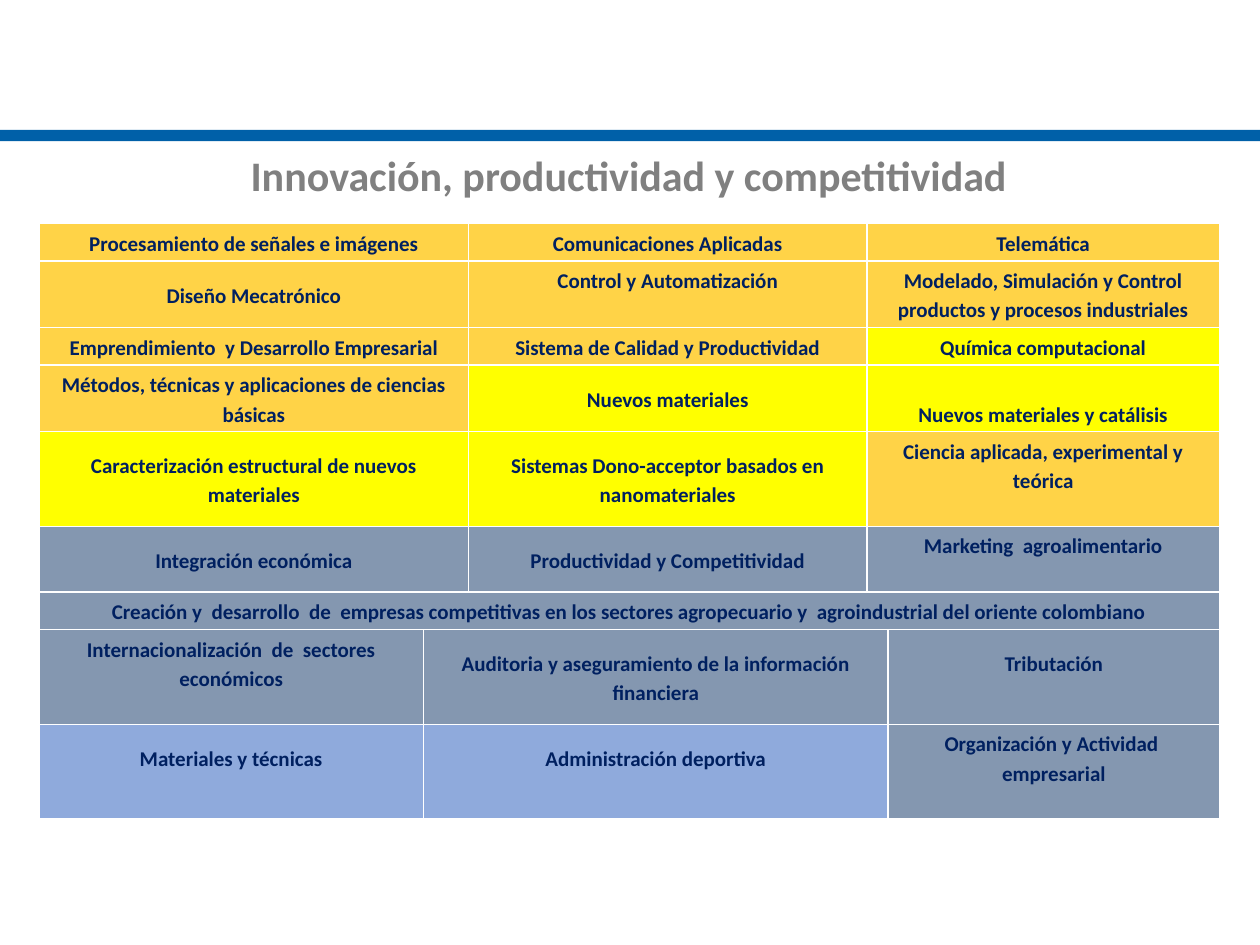
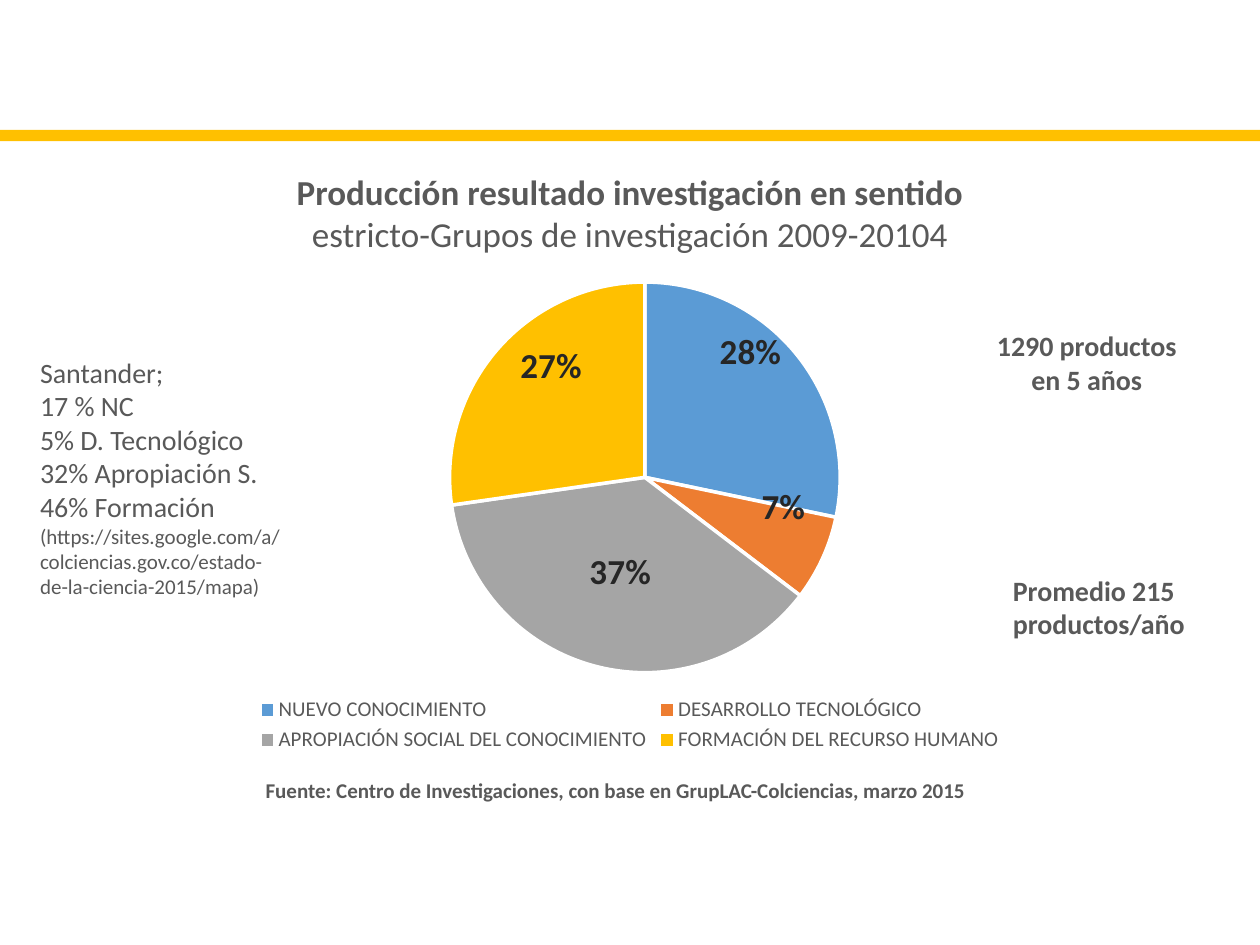
from dataclasses import dataclass
from typing import NamedTuple

from lxml.etree import SubElement
from pptx import Presentation
from pptx.chart.data import CategoryChartData
from pptx.dml.color import RGBColor
from pptx.enum.chart import XL_CHART_TYPE as ChartType
from pptx.enum.chart import XL_LABEL_POSITION as LabelPosition
from pptx.enum.chart import XL_LEGEND_POSITION as LegendPosition
from pptx.enum.shapes import MSO_SHAPE as ShapeKind
from pptx.enum.text import MSO_ANCHOR as Anchor
from pptx.enum.text import MSO_AUTO_SIZE as AutoSize
from pptx.enum.text import PP_ALIGN as Align
from pptx.oxml import parse_xml
from pptx.oxml.ns import nsdecls, qn
from pptx.util import Inches, Pt


@dataclass(frozen=True)
class Theme:
    """Colours, font and type sizes of the deck."""
    font: str = "Calibri"
    blue_band: str = "0060A8"
    gold: str = "FFC000"
    heading: str = "808080"
    text: str = "595959"
    label: str = "262626"
    navy: str = "002060"
    white: str = "FFFFFF"
    amber: str = "FFD347"
    yellow: str = "FFFF00"
    slate: str = "8497B0"
    sky: str = "8FAADC"
    slices: tuple = ("5B9BD5", "ED7D31", "A5A5A5", "FFC000")
    title: int = 24
    subtitle: int = 20
    body: int = 16
    small: int = 12


THEME = Theme()
GRID_COLUMNS, GRID_ROWS = 100, 75


class Box(NamedTuple):
    """A rectangle in inches."""
    left: float
    top: float
    width: float
    height: float

    def area(self, column, row, columns, rows):
        """Return the box that covers the given grid columns and rows."""
        column_width, row_height = self.width / GRID_COLUMNS, self.height / GRID_ROWS
        return Box(self.left + column * column_width, self.top + row * row_height,
                   columns * column_width, rows * row_height)

    def lengths(self):
        """Return left, top, width and height as slide lengths."""
        return [Inches(value) for value in self]


class Topic(NamedTuple):
    """A research line in the table, with its fill and place in the cell."""
    text: str
    fill: str
    anchor: Anchor = Anchor.MIDDLE
    lift: float = 0


PAGE = Box(0, 0, 10, 7.5)
COLUMN_WEIGHTS = [3.05, 0.36, 3.16, 0.17, 2.63]
ROW_WEIGHTS = [0.3, 0.52, 0.3, 0.52, 0.75, 0.52, 0.3, 0.75, 0.75]
UPPER_SPANS, FULL_SPAN, LOWER_SPANS = [2, 1, 2], [5], [1, 3, 1]
ROW_SPANS = [UPPER_SPANS] * 6 + [FULL_SPAN] + [LOWER_SPANS] * 2
LINE = 0.23
TOPICS = [
    [Topic("Procesamiento de señales e imágenes", THEME.amber),
     Topic("Comunicaciones Aplicadas", THEME.amber),
     Topic("Telemática", THEME.amber)],
    [Topic("Diseño Mecatrónico", THEME.amber),
     Topic("Control y Automatización", THEME.amber, Anchor.TOP),
     Topic("Modelado, Simulación y Control productos y procesos industriales", THEME.amber)],
    [Topic("Emprendimiento  y Desarrollo Empresarial", THEME.amber),
     Topic("Sistema de Calidad y Productividad", THEME.amber),
     Topic("Química computacional", THEME.yellow)],
    [Topic("Métodos, técnicas y aplicaciones de ciencias básicas", THEME.amber),
     Topic("Nuevos materiales", THEME.yellow),
     Topic("Nuevos materiales y catálisis", THEME.yellow, Anchor.BOTTOM)],
    [Topic("Caracterización estructural de nuevos materiales", THEME.yellow),
     Topic("Sistemas Dono-acceptor basados en nanomateriales", THEME.yellow),
     Topic("Ciencia aplicada, experimental y teórica", THEME.amber, Anchor.TOP)],
    [Topic("Integración económica", THEME.slate),
     Topic("Productividad y Competitividad", THEME.slate),
     Topic("Marketing  agroalimentario", THEME.slate, Anchor.TOP)],
    [Topic("Creación y  desarrollo  de  empresas competitivas en los sectores "
           "agropecuario y  agroindustrial del oriente colombiano", THEME.slate)],
    [Topic("Internacionalización  de  sectores económicos", THEME.slate, Anchor.TOP),
     Topic("Auditoria y aseguramiento de la información financiera", THEME.slate),
     Topic("Tributación", THEME.slate, lift=LINE)],
    [Topic("Materiales y técnicas", THEME.sky, lift=LINE),
     Topic("Administración deportiva", THEME.sky, lift=LINE),
     Topic("Organización y Actividad  empresarial", THEME.slate, Anchor.TOP)],
]
PRODUCTS = {"NUEVO CONOCIMIENTO": 28, "DESARROLLO TECNOLÓGICO": 7,
            "APROPIACIÓN SOCIAL DEL CONOCIMIENTO": 37, "FORMACIÓN DEL RECURSO HUMANO": 27}
LABEL_SHIFTS = [(0.03, -0.12), (0.05, -0.02), (0, 0), (-0.02, -0.09)]


def style_font(font, size, colour, bold=False):
    """Set the theme font with a size, a colour and a weight."""
    font.name, font.size, font.bold = THEME.font, Pt(size), bold
    font.color.rgb = RGBColor.from_string(colour)


def paint(fill, colour):
    """Give a fill one solid colour."""
    fill.solid()
    fill.fore_color.rgb = RGBColor.from_string(colour)


def start_slide(presentation, box, band_colour):
    """Add a title-only slide with its coloured band."""
    slide = presentation.slides.add_slide(presentation.slide_layouts[5])
    band = slide.shapes.add_shape(ShapeKind.RECTANGLE, *box.area(0, 10.3, 100, 0.9).lengths())
    band.shadow.inherit = False
    paint(band.fill, band_colour)
    band.line.fill.background()
    return slide


def set_title(slide, box, runs, size, colour):
    """Move the title placeholder and fill it with (text, bold) runs."""
    title = slide.shapes.title
    title.left, title.top, title.width, title.height = box.lengths()
    frame = title.text_frame
    frame.auto_size, frame.word_wrap = AutoSize.NONE, True
    frame.vertical_anchor = Anchor.TOP
    paragraph = frame.paragraphs[0]
    paragraph.alignment = Align.CENTER
    for text, bold in runs:
        run = paragraph.add_run()
        run.text = text
        style_font(run.font, size, colour, bold)


def add_note(slide, box, lines, size=THEME.body, bold=True, align=Align.LEFT, wrap=True):
    """Add a text box with one paragraph per line and return its last paragraph."""
    frame = slide.shapes.add_textbox(*box.lengths()).text_frame
    frame.word_wrap = wrap
    for index, line in enumerate(lines):
        paragraph = frame.add_paragraph() if index else frame.paragraphs[0]
        paragraph.text = line
        paragraph.alignment = align
        style_font(paragraph.font, size, THEME.text, bold)
    return paragraph


def style_cell(cell, topic):
    """Fill a cell and give it thin white borders."""
    paint(cell.fill, topic.fill)
    properties = cell._tc.get_or_add_tcPr()
    for index, side in enumerate(("lnL", "lnR", "lnT", "lnB")):
        properties.insert(index, parse_xml(
            f'<a:{side} {nsdecls("a")} w="12700"><a:solidFill>'
            f'<a:srgbClr val="{THEME.white}"/></a:solidFill></a:{side}>'))


def write_topic(cell, topic):
    """Write a centred topic into a cell."""
    cell.margin_left = cell.margin_right = Inches(0.06)
    cell.margin_top, cell.margin_bottom = Inches(0.03), Inches(0.03 + topic.lift)
    cell.vertical_anchor = topic.anchor
    paragraph = cell.text_frame.paragraphs[0]
    paragraph.text = topic.text
    paragraph.alignment, paragraph.line_spacing = Align.CENTER, 1.15
    style_font(paragraph.font, THEME.small, THEME.navy, True)


def add_topic_table(slide, box):
    """Add the table of research lines, merging cells by the row spans."""
    table = slide.shapes.add_table(len(ROW_WEIGHTS), len(COLUMN_WEIGHTS), *box.lengths()).table
    table.first_row = table.horz_banding = False
    for column, weight in zip(table.columns, COLUMN_WEIGHTS):
        column.width = Inches(box.width * weight / sum(COLUMN_WEIGHTS))
    for row, weight in zip(table.rows, ROW_WEIGHTS):
        row.height = Inches(box.height * weight / sum(ROW_WEIGHTS))
    for row, (topics, spans) in enumerate(zip(TOPICS, ROW_SPANS)):
        column = 0
        for topic, span in zip(topics, spans):
            for offset in range(span):
                style_cell(table.cell(row, column + offset), topic)
            cell = table.cell(row, column)
            if span > 1:
                cell.merge(table.cell(row, column + span - 1))
            write_topic(cell, topic)
            column += span


def manual_layout(**settings):
    """Return a chart layout element with the given settings."""
    layout = parse_xml(f'<c:layout {nsdecls("c")}><c:manualLayout/></c:layout>')
    for name, value in settings.items():
        SubElement(layout[0], qn(f"c:{name}"), val=str(value))
    return layout


def label_slices(series):
    """Colour each slice and place its percentage."""
    for index, (colour, shift) in enumerate(zip(THEME.slices, LABEL_SHIFTS)):
        point = series.points[index]
        paint(point.format.fill, colour)
        paint(point.format.line.fill, THEME.white)
        point.format.line.width = Pt(2)
        style_font(point.data_label.font, THEME.subtitle, THEME.label, True)
        point.data_label.position = LabelPosition.CENTER
        label = series._element.findall(".//" + qn("c:dLbl"))[index]
        label.find(qn("c:showVal")).set("val", "0")
        label.find(qn("c:showPercent")).set("val", "1")
        label.insert(1, manual_layout(x=shift[0], y=shift[1]))


def add_product_pie(slide, box):
    """Add the pie of research products with its legend."""
    data = CategoryChartData()
    data.categories = list(PRODUCTS)
    data.add_series("Series 1", list(PRODUCTS.values()))
    chart = slide.shapes.add_chart(ChartType.PIE, *box.lengths(), data).chart
    chart.has_title = False
    style_font(chart.font, THEME.small, THEME.text)
    chart.has_legend = True
    chart.legend.position = LegendPosition.BOTTOM
    chart.legend.include_in_layout = False
    style_font(chart.legend.font, THEME.small, THEME.text)
    chart.plots[0].vary_by_categories = True
    label_slices(chart.plots[0].series[0])
    plot_area = chart._chartSpace.find(".//" + qn("c:plotArea"))
    for layout in plot_area.findall(qn("c:layout")):
        plot_area.remove(layout)
    plot_area.insert(0, manual_layout(layoutTarget="inner", xMode="edge", yMode="edge",
                                      x=0.04, y=0.1, w=0.95, h=0.74))


def build_topics_slide(presentation, box):
    """Build the slide with the table of research lines."""
    slide = start_slide(presentation, box, THEME.blue_band)
    set_title(slide, box.area(12.2, 11.4, 75.4, 5),
              [("Innovación, productividad y competitividad", True)], THEME.title, THEME.heading)
    add_topic_table(slide, box.area(3.1, 17.7, 93.7, 47.2))


def build_products_slide(presentation, box):
    """Build the slide with the pie of research products and its notes."""
    slide = start_slide(presentation, box, THEME.gold)
    set_title(slide, box.area(20.1, 13, 59.8, 7.7),
              [("Producción resultado investigación en sentido ", True),
               ("estricto-Grupos de investigación 2009-20104", False)],
              THEME.subtitle, THEME.text)
    add_product_pie(slide, box.area(10.5, 18.2, 79, 41.9))
    add_note(slide, box.area(77.2, 25.6, 18.1, 6.4), ["1290 productos en 5 años"],
             align=Align.CENTER)
    add_note(slide, box.area(79.4, 45, 15.9, 6.4), ["Promedio 215", "productos/año"], wrap=False)
    add_note(slide, box.area(20.1, 61.2, 58.4, 3),
             ["Fuente: Centro de Investigaciones, con base en GrupLAC-Colciencias, marzo 2015"],
             size=THEME.small, wrap=False)
    last = add_note(slide, box.area(2.2, 27.7, 21.6, 20.5),
                    ["Santander;", "17 % NC", "5% D. Tecnológico", "32% Apropiación S.",
                     "46% Formación "], bold=False)
    address = last.add_run()
    address.text = "(https://sites.google.com/a/colciencias.gov.co/estado-de-la-ciencia-2015/mapa)"
    address.font.size = Pt(THEME.small)


def main():
    """Build and save the presentation."""
    presentation = Presentation()
    presentation.slide_width, presentation.slide_height = Inches(PAGE.width), Inches(PAGE.height)
    build_topics_slide(presentation, PAGE)
    build_products_slide(presentation, PAGE)
    presentation.save("out.pptx")


if __name__ == "__main__":
    main()
